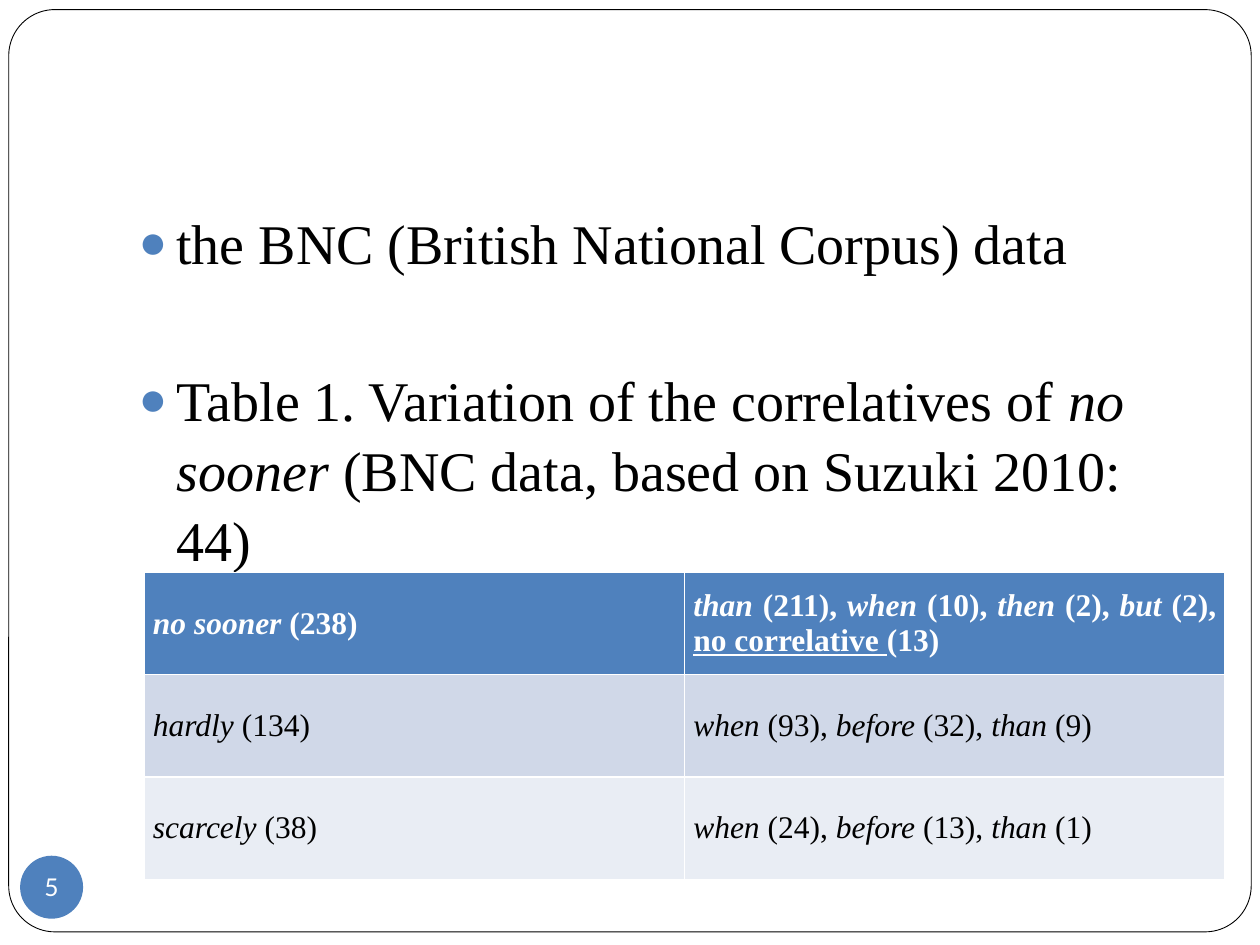
from lxml.etree import SubElement
from pptx import Presentation
from pptx.dml.color import RGBColor
from pptx.enum.shapes import MSO_SHAPE
from pptx.enum.text import MSO_ANCHOR, MSO_AUTO_SIZE, PP_ALIGN
from pptx.oxml.ns import qn
from pptx.util import Pt

BLUE = RGBColor(0x4F, 0x81, 0xBD)
WHITE = RGBColor(0xFF, 0xFF, 0xFF)
BLACK = RGBColor(0, 0, 0)
ROW_FILLS = [BLUE, RGBColor(0xD0, 0xD8, 0xE8), RGBColor(0xE9, 0xED, 0xF4)]
SERIF = "Times New Roman"

# *...* marks italics, _..._ marks underlining
POINTS = [
    ("the BNC (British National Corpus) data", 5.8),
    ("Table 1. Variation of the correlatives of *no sooner*"
     " (BNC data, based on Suzuki 2010: 44)", 50),
]
CORRELATIVES = [
    ("*no sooner *(238)",
     "*than *(211), *when *(10), *then *(2), *but* (2), _no correlative _(13)"),
    ("*hardly* (134)", "*when* (93), *before* (32), *than* (9)"),
    ("*scarcely* (38)", "*when* (24), *before* (13), *than* (1)"),
]


def style_font(font, name, size, color):
    font.name = name
    font.size = Pt(size)
    font.color.rgb = color


def add_marked_runs(paragraph, marked_text):
    for i, part in enumerate(marked_text.split("*")):
        for j, words in enumerate(part.split("_")):
            if words:
                run = paragraph.add_run()
                run.text = words
                if i % 2:
                    run.font.italic = True
                if j % 2:
                    run.font.underline = True


def add_bullet(paragraph):
    properties = paragraph._p.get_or_add_pPr()
    properties.set("marL", str(Pt(21.6)))
    properties.set("indent", str(-Pt(21.6)))
    color = SubElement(properties, qn("a:buClr"))
    SubElement(color, qn("a:srgbClr"), val=str(BLUE))
    SubElement(properties, qn("a:buSzPct"), val="85000")
    SubElement(properties, qn("a:buChar"), char="●")


def add_frame(slide, left, top, width, height):
    frame = slide.shapes.add_shape(MSO_SHAPE.ROUNDED_RECTANGLE,
                                   Pt(left), Pt(top), Pt(width), Pt(height))
    frame.adjustments[0] = 0.05
    frame.shadow.inherit = False
    frame.fill.solid()
    frame.fill.fore_color.rgb = WHITE
    frame.line.color.rgb = BLACK
    frame.line.width = Pt(0.5)
    # Behind the placeholders
    slide.shapes._spTree.insert(2, frame._element)


def add_page_number(slide, left, top, size, number):
    badge = slide.shapes.add_shape(MSO_SHAPE.OVAL, Pt(left), Pt(top),
                                   Pt(size), Pt(size))
    badge.shadow.inherit = False
    badge.fill.solid()
    badge.fill.fore_color.rgb = BLUE
    badge.line.fill.background()
    label = badge.text_frame
    label.margin_left = label.margin_right = 0
    label.margin_top = label.margin_bottom = 0
    label.word_wrap = False
    label.vertical_anchor = MSO_ANCHOR.MIDDLE
    paragraph = label.paragraphs[0]
    paragraph.text = number
    paragraph.alignment = PP_ALIGN.CENTER
    style_font(paragraph.font, "Lato", 14, WHITE)


def fill_points(body, left, top, width, height):
    body.left, body.top = Pt(left), Pt(top)
    body.width, body.height = Pt(width), Pt(height)
    frame = body.text_frame
    frame.auto_size = MSO_AUTO_SIZE.NONE
    for i, (text, gap) in enumerate(POINTS):
        paragraph = frame.add_paragraph() if i else frame.paragraphs[0]
        paragraph.space_before = Pt(gap)
        paragraph.line_spacing = 1.04
        add_bullet(paragraph)
        style_font(paragraph.font, SERIF, 32, BLACK)
        add_marked_runs(paragraph, text)


def add_correlatives_table(slide, left, top, width, height):
    table = slide.shapes.add_table(len(CORRELATIVES), 2, Pt(left), Pt(top),
                                   Pt(width), Pt(height)).table
    for r, (row, fill) in enumerate(zip(CORRELATIVES, ROW_FILLS)):
        for c, text in enumerate(row):
            cell = table.cell(r, c)
            cell.fill.solid()
            cell.fill.fore_color.rgb = fill
            cell.vertical_anchor = MSO_ANCHOR.MIDDLE
            cell.margin_left = cell.margin_right = Pt(5)
            cell.margin_top = cell.margin_bottom = 0
            paragraph = cell.text_frame.paragraphs[0]
            paragraph.alignment = PP_ALIGN.JUSTIFY
            style_font(paragraph.font, SERIF, 18, BLACK if r else WHITE)
            paragraph.font.bold = r == 0
            add_marked_runs(paragraph, text)


def main():
    presentation = Presentation()
    presentation.slide_width, presentation.slide_height = Pt(720), Pt(540)
    slide = presentation.slides.add_slide(presentation.slide_layouts[1])
    # This slide has no title
    title = slide.shapes.title._element
    title.getparent().remove(title)

    add_frame(slide, 5, 5.5, 710, 527)
    add_page_number(slide, 11.5, 489, 36, "5")
    fill_points(slide.placeholders[1], 72, 114, 612, 360)
    add_correlatives_table(slide, 82.4, 327, 617.6, 175.5)
    presentation.save("out.pptx")


if __name__ == "__main__":
    main()
